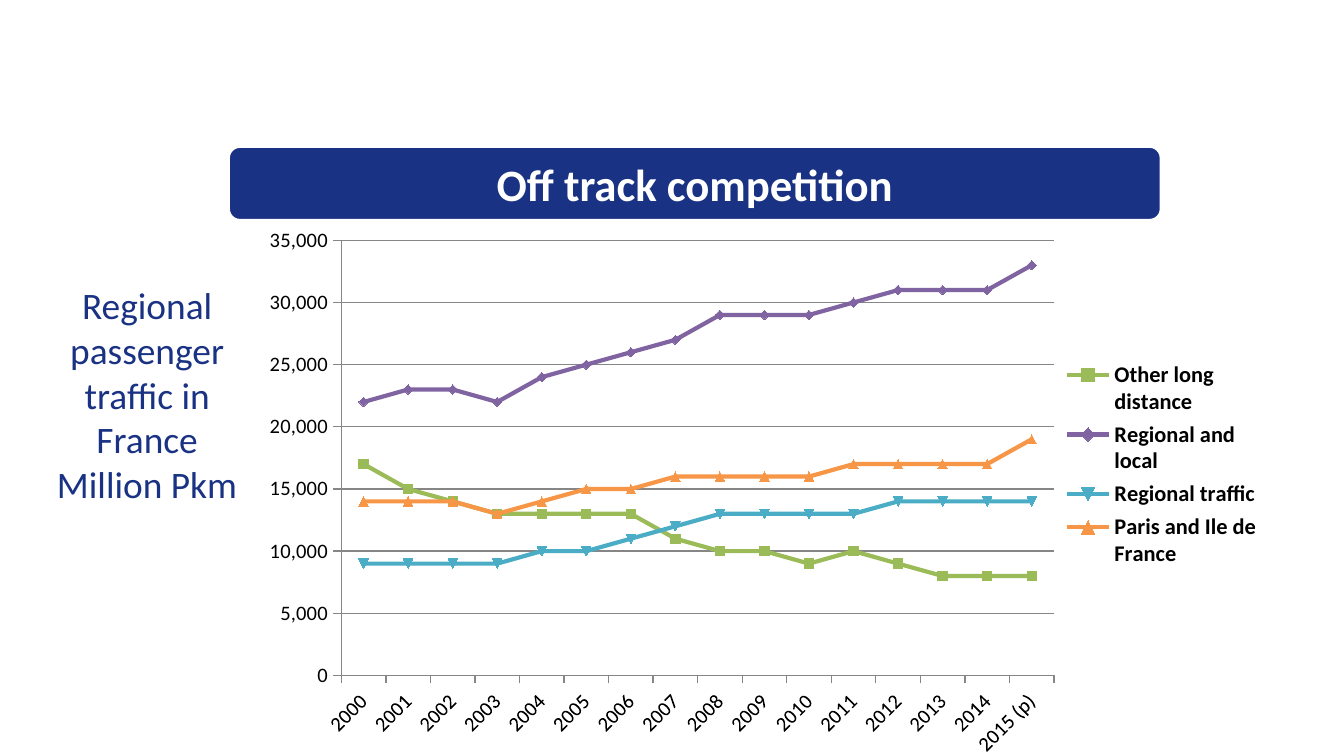
"""Build the off track competition slide with its line chart."""
from dataclasses import dataclass

from pptx import Presentation
from pptx import util as u
from pptx.chart import chart as ch
from pptx.chart import data as cd
from pptx.dml import color as dc
from pptx.enum import chart as ec, shapes, text
from pptx.oxml import ns, parse_xml

NAVY, WHITE, BLACK, GREY = "1A3283", "FFFFFF", "000000", "868686"


@dataclass
class Box:
    left: float
    top: float
    width: float
    height: float

    def inches(self) -> list:
        return [u.Inches(v) for v in (self.left, self.top, self.width, self.height)]


@dataclass
class Traffic:
    name: str
    color: str
    thousands: list[int]


TRAFFIC = [
    Traffic("Other long distance ", "9BBB59",
            [17, 15, 14, 13, 13, 13, 13, 11, 10, 10, 9, 10, 9, 8, 8, 8]),
    Traffic("Regional and local", "8064A2",
            [22, 23, 23, 22, 24, 25, 26, 27, 29, 29, 29, 30, 31, 31, 31, 33]),
    Traffic("Regional traffic", "4BACC6",
            [9, 9, 9, 9, 10, 10, 11, 12, 13, 13, 13, 13, 14, 14, 14, 14]),
    Traffic("Paris and Ile de France", "F79646",
            [14, 14, 14, 13, 14, 15, 15, 16, 16, 16, 16, 17, 17, 17, 17, 19]),
]
YEARS = [str(y) for y in range(2000, 2015)] + ["2015 (p)"]


def rgb(value: str) -> dc.RGBColor:
    return dc.RGBColor.from_string(value)


def set_all(obj, values: dict) -> None:
    for name, value in values.items():
        setattr(obj, name, value)


def set_font(font, color: str, size: float, bold: bool = False) -> None:
    set_all(font, {"name": "Calibri", "size": u.Pt(size), "bold": bold})
    font.color.rgb = rgb(color)


def set_fill(fill, color: str) -> None:
    fill.solid()
    fill.fore_color.rgb = rgb(color)


def set_line(line, color: str, width: float) -> None:
    line.color.rgb = rgb(color)
    line.width = u.Pt(width)


def write(tf, lines: list[str], color: str, size: float, bold: bool = False) -> None:
    for i, line in enumerate(lines):
        p = tf.paragraphs[0] if i == 0 else tf.add_paragraph()
        p.alignment = text.PP_ALIGN.CENTER
        r = p.add_run()
        r.text = line
        set_font(r.font, color, size, bold)


def place(parent, index: int, percent: Box, inner: bool = False) -> None:
    for old in parent.findall(ns.qn("c:layout")):
        parent.remove(old)
    target = '<c:layoutTarget val="inner"/>' if inner else ""
    parent.insert(index, parse_xml(
        f'<c:layout {ns.nsdecls("c")}><c:manualLayout>{target}'
        '<c:xMode val="edge"/><c:yMode val="edge"/>'
        f'<c:x val="{percent.left / 100}"/><c:y val="{percent.top / 100}"/>'
        f'<c:w val="{percent.width / 100}"/><c:h val="{percent.height / 100}"/>'
        '</c:manualLayout></c:layout>'))


def format_axes(chart: ch.Chart) -> None:
    for axis in (chart.category_axis, chart.value_axis):
        axis.major_tick_mark = ec.XL_TICK_MARK.OUTSIDE
        set_font(axis.tick_labels.font, BLACK, 11)
        set_line(axis.format.line, GREY, 0.75)
    axis = chart.value_axis
    set_all(axis, {"minimum_scale": 0, "maximum_scale": 35000,
                   "major_unit": 5000, "has_major_gridlines": True})
    set_line(axis.major_gridlines.format.line, GREY, 0.75)
    set_all(axis.tick_labels, {"number_format": "#,##0", "number_format_is_linked": False})
    labels = chart.element.find(
        "/".join([".//" + ns.qn("c:catAx"), ns.qn("c:txPr"), ns.qn("a:bodyPr")]))
    labels.set("rot", "-2700000")


def add_traffic_chart(s, box: Box) -> None:
    data = cd.CategoryChartData()
    data.categories = YEARS
    for t in TRAFFIC:
        data.add_series(t.name, [v * 1000 for v in t.thousands])
    chart = s.shapes.add_chart(ec.XL_CHART_TYPE.LINE_MARKERS, *box.inches(), data).chart
    set_all(chart, {"has_title": False, "has_legend": True})
    set_font(chart.font, BLACK, 10)
    chart.plots[0].vary_by_categories = False
    for series, t in zip(chart.plots[0].series, TRAFFIC):
        series.smooth = False
        set_line(series.format.line, t.color, 2.25)
        set_fill(series.marker.format.fill, t.color)
        series.marker.format.line.color.rgb = rgb(t.color)
    format_axes(chart)
    set_all(chart.legend, {"position": ec.XL_LEGEND_POSITION.RIGHT, "include_in_layout": False})
    set_font(chart.legend.font, BLACK, 12, True)
    place(chart.element.find(".//" + ns.qn("c:plotArea")), 0, Box(9.6, 3.5, 67.9, 81.6), True)
    place(chart.element.find(".//" + ns.qn("c:legend")), 1, Box(77.5, 25, 20.5, 41))


def add_caption(s, box: Box, lines: list[str]) -> None:
    tf = s.shapes.add_textbox(*box.inches()).text_frame
    set_all(tf, {"word_wrap": True, "auto_size": text.MSO_AUTO_SIZE.SHAPE_TO_FIT_TEXT})
    write(tf, lines, NAVY, 20)


def add_title_bar(s, box: Box, title: str) -> None:
    sp = s.shapes.add_shape(shapes.MSO_SHAPE.ROUNDED_RECTANGLE, *box.inches())
    sp.shadow.inherit = False
    set_fill(sp.fill, NAVY)
    set_line(sp.line, WHITE, 3)
    set_all(sp.text_frame, {"word_wrap": True, "vertical_anchor": text.MSO_ANCHOR.MIDDLE})
    write(sp.text_frame, [title], WHITE, 24, True)


def main() -> None:
    """Draw the chart, its caption and the title bar."""
    prs = Presentation()
    set_all(prs, {"slide_width": u.Inches(10), "slide_height": u.Inches(10 * 9 / 16)})
    s = prs.slides.add_slide(prs.slide_layouts.get_by_name("Blank"))
    add_traffic_chart(s, Box(1.79, 1.65, 7.81, 3.98))
    add_caption(s, Box(0.14, 2.05, 1.91, 1.78),
                ["Regional passenger traffic in France", "Million Pkm"])
    add_title_bar(s, Box(1.69, 1.08, 6.96, 0.57), "Off track competition")
    prs.save("out.pptx")


if __name__ == "__main__":
    main()
